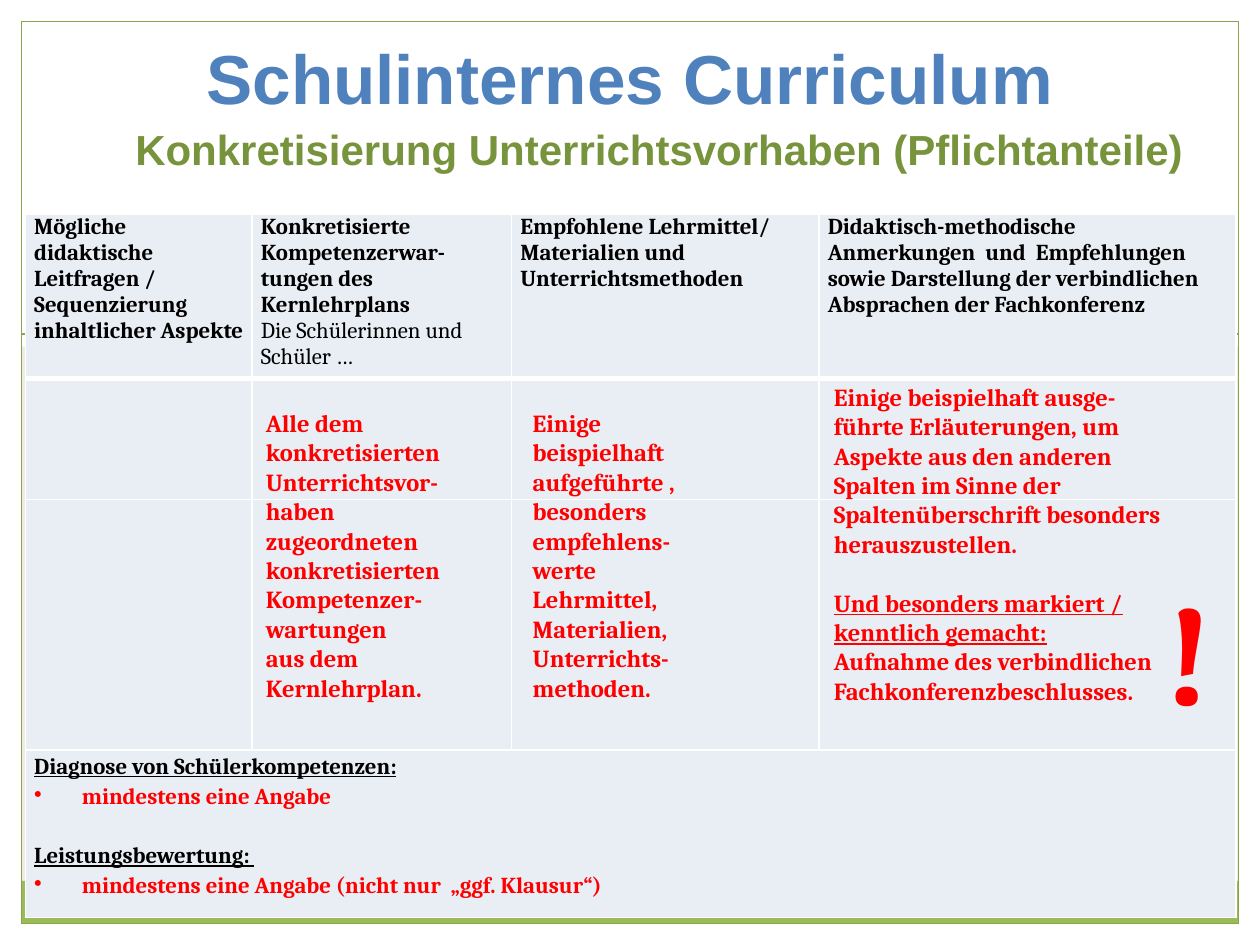
from lxml import etree
from pptx import Presentation
from pptx.dml.color import RGBColor
from pptx.enum.dml import MSO_LINE
from pptx.enum.shapes import MSO_CONNECTOR, MSO_SHAPE
from pptx.enum.text import MSO_ANCHOR, PP_ALIGN
from pptx.oxml.ns import qn
from pptx.util import Cm, Pt

RECTANGLE = MSO_SHAPE.RECTANGLE
STRAIGHT = MSO_CONNECTOR.STRAIGHT
DASH = MSO_LINE.SQUARE_DOT
TOP, BOTTOM = MSO_ANCHOR.TOP, MSO_ANCHOR.BOTTOM
LEFT, CENTER, RIGHT, JUSTIFY = PP_ALIGN.LEFT, PP_ALIGN.CENTER, PP_ALIGN.RIGHT, PP_ALIGN.JUSTIFY

COLORS = {
    "background": "EEECE1", "white": "FFFFFF", "bar": "9BBB59", "frame": "89A54F",
    "title": "4F81BD", "subtitle": "77933C", "cell": "E9EDF4", "black": "000000", "red": "FF0000",
}
COLUMNS = [4.57, 5.23, 6.2, 8.41]
ROWS = [3.3, 2.44, 5.05, 3.38]
HEADERS = [
    [("Mögliche didaktische Leitfragen / Sequenzierung inhaltlicher Aspekte", True)],
    [("Konkretisierte Kompetenzerwar-tungen des Kernlehrplans", True),
     ("Die Schülerinnen und Schüler …", False)],
    [("Empfohlene Lehrmittel/ Materialien und Unterrichtsmethoden", True)],
    [("Didaktisch-methodische Anmerkungen  und  Empfehlungen sowie Darstellung "
      "der verbindlichen Absprachen der Fachkonferenz", True)],
]
ASSESSMENT = [
    ("Diagnose von Schülerkompetenzen:", False, 0),
    ("mindestens eine Angabe", True, 0),
    ("Leistungsbewertung: ", False, 17),
    ("mindestens eine Angabe (nicht nur  „ggf. Klausur“)", True, 0),
]
NOTES = [
    ((4.6, 3.78, 4.6, 6.25), 14, [
        ("Alle dem konkretisierten Unterrichtsvor-haben zugeordneten konkretisierten "
         "Kompetenzer-wartungen", False, 0),
        ("aus dem Kernlehrplan.", False, 0)]),
    ((9.98, 3.78, 4.39, 6.25), 14, [
        ("Einige beispielhaft aufgeführte , besonders empfehlens-werte Lehrmittel, "
         "Materialien, Unterrichts-methoden.", False, 0)]),
    ((16.05, 3.25, 7.6, 7.44), 14, [
        ("Einige beispielhaft ausge-führte Erläuterungen, um Aspekte aus den anderen Spalten "
         "im Sinne der Spaltenüberschrift besonders herauszustellen.", False, 0),
        ("Und besonders markiert / kenntlich gemacht:", True, 16.8),
        ("Aufnahme des verbindlichen Fachkonferenzbeschlusses.", False, 0)]),
    ((22.73, 6.96, 0.79, 3.68), 80, [("!", False, 0)]),
]


def color(name):
    """Return the named colour."""
    return RGBColor.from_string(COLORS[name])


def add_run(paragraph, text, size, color_name, font="Cambria", bold=True, underline=False):
    """Append one formatted run to a paragraph."""
    run = paragraph.add_run()
    run.text = text
    run.font.name, run.font.size = font, Pt(size)
    run.font.bold, run.font.underline = bold, underline
    run.font.color.rgb = color(color_name)


def next_paragraph(text_frame, index):
    """Return the first paragraph, or a new one for later indexes."""
    return text_frame.add_paragraph() if index else text_frame.paragraphs[0]


def add_text_box(slide, box, anchor=TOP):
    """Add a wrapping text box and return its text frame."""
    text_frame = slide.shapes.add_textbox(*map(Cm, box)).text_frame
    text_frame.word_wrap = True
    text_frame.vertical_anchor = anchor
    return text_frame


def add_rectangle(slide, box, fill=None, line=None):
    """Add a rectangle with an optional fill and outline."""
    shape = slide.shapes.add_shape(RECTANGLE, *map(Cm, box))
    shape.shadow.inherit = False
    if fill:
        shape.fill.solid()
        shape.fill.fore_color.rgb = color(fill)
    else:
        shape.fill.background()
    if line:
        shape.line.color.rgb = color(line)
        shape.line.width = Pt(0.75)
    else:
        shape.line.fill.background()


def add_frame(slide, box, margin=0.43):
    """Draw the white margins, green bar, dashed rule and outline of the page."""
    left, top, width, height = box
    right, bottom = left + width - margin, top + height - margin
    inner_width = width - 2 * margin
    for band in [(left, bottom, width, margin), (right, top, margin, height),
                 (left, top, margin, height), (left, top, width, 6.99)]:
        add_rectangle(slide, band, "white")
    add_rectangle(slide, (left + margin, bottom - 0.86, inner_width, 0.86), "bar")
    rule_y = Cm(top + 6.73)
    rule = slide.shapes.add_connector(STRAIGHT, Cm(left + margin), rule_y, Cm(right), rule_y)
    rule.line.color.rgb = color("frame")
    rule.line.width = Pt(0.9)
    rule.line.dash_style = DASH
    etree.SubElement(rule._element.spPr, qn("a:effectLst"))
    add_rectangle(slide, (left + margin, top + margin, inner_width, height - 2 * margin),
                  line="frame")


def add_headings(slide, box):
    """Place the title and the subtitle."""
    left, top, width, _ = box
    title = add_text_box(slide, (left, top, width - 0.6, 1.6), BOTTOM).paragraphs[0]
    title.alignment = CENTER
    add_run(title, "Schulinternes Curriculum", 39.6, "title", "Arial")
    subtitle = add_text_box(slide, (left, top + 1.45, width, 1.27)).paragraphs[0]
    subtitle.alignment = RIGHT
    add_run(subtitle, "Konkretisierung Unterrichtsvorhaben (Pflichtanteile)", 24, "subtitle", "Arial")


def style_cell(cell, row):
    """Set fill, margins and white borders, thicker below the header."""
    cell.fill.solid()
    cell.fill.fore_color.rgb = color("cell")
    cell.margin_left = cell.margin_right = Cm(0.18)
    cell.margin_top = cell.margin_bottom = 0
    widths = {"a:lnL": 1, "a:lnR": 1, "a:lnT": 3 if row == 1 else 1, "a:lnB": 3 if row == 0 else 1}
    properties = cell._tc.get_or_add_tcPr()
    for index, (tag, width) in enumerate(widths.items()):
        border = etree.Element(qn(tag), w=str(Pt(width)))
        fill = etree.SubElement(border, qn("a:solidFill"))
        etree.SubElement(fill, qn("a:srgbClr"), val=COLORS["white"])
        properties.insert(index, border)


def add_bullet(paragraph):
    """Give a paragraph a hanging bullet."""
    properties = paragraph._p.get_or_add_pPr()
    properties.set("marL", str(Cm(0.96)))
    properties.set("indent", str(-Cm(0.96)))
    etree.SubElement(properties, qn("a:buChar"), char="•")


def add_curriculum_table(slide, box):
    """Place the table with its header row and merged assessment row."""
    table = slide.shapes.add_table(len(ROWS), len(COLUMNS), *map(Cm, box)).table
    table.first_row = table.horz_banding = False
    for column, width in zip(table.columns, COLUMNS):
        column.width = Cm(width)
    for index, (row, height) in enumerate(zip(table.rows, ROWS)):
        row.height = Cm(height)
        for cell in row.cells:
            style_cell(cell, index)
    for column, lines in enumerate(HEADERS):
        for index, (text, bold) in enumerate(lines):
            paragraph = next_paragraph(table.cell(0, column).text_frame, index)
            add_run(paragraph, text, 13, "black", bold=bold)
    last_row = len(ROWS) - 1
    assessment = table.cell(last_row, 0)
    assessment.merge(table.cell(last_row, len(COLUMNS) - 1))
    for index, (text, bulleted, space) in enumerate(ASSESSMENT):
        paragraph = next_paragraph(assessment.text_frame, index)
        paragraph.alignment = JUSTIFY
        paragraph.line_spacing = 1.15
        paragraph.space_before = Pt(space)
        if bulleted:
            add_bullet(paragraph)
        add_run(paragraph, text, 13, "red" if bulleted else "black", underline=not bulleted)


def add_notes(slide, box):
    """Place the red explanations over the table columns."""
    left, top = box[:2]
    for (x, y, width, height), size, lines in NOTES:
        text_frame = add_text_box(slide, (left + x, top + y, width, height))
        for index, (text, underline, space) in enumerate(lines):
            paragraph = next_paragraph(text_frame, index)
            paragraph.alignment = LEFT
            paragraph.space_before = Pt(space)
            add_run(paragraph, text, size, "red", underline=underline)


def main():
    """Build and save the slide."""
    presentation = Presentation()
    presentation.slide_width, presentation.slide_height = Cm(25.4), Cm(19.05)
    slide = presentation.slides.add_slide(presentation.slide_layouts[6])
    slide.background.fill.solid()
    slide.background.fill.fore_color.rgb = color("background")
    table_box = (0.51, 4.32, sum(COLUMNS), sum(ROWS))
    add_frame(slide, (0, 0, 25.4, 19.05))
    add_headings(slide, (1.9, 0.91, 22.2, 2.72))
    add_curriculum_table(slide, table_box)
    add_notes(slide, table_box)
    presentation.save("out.pptx")


if __name__ == "__main__":
    main()
